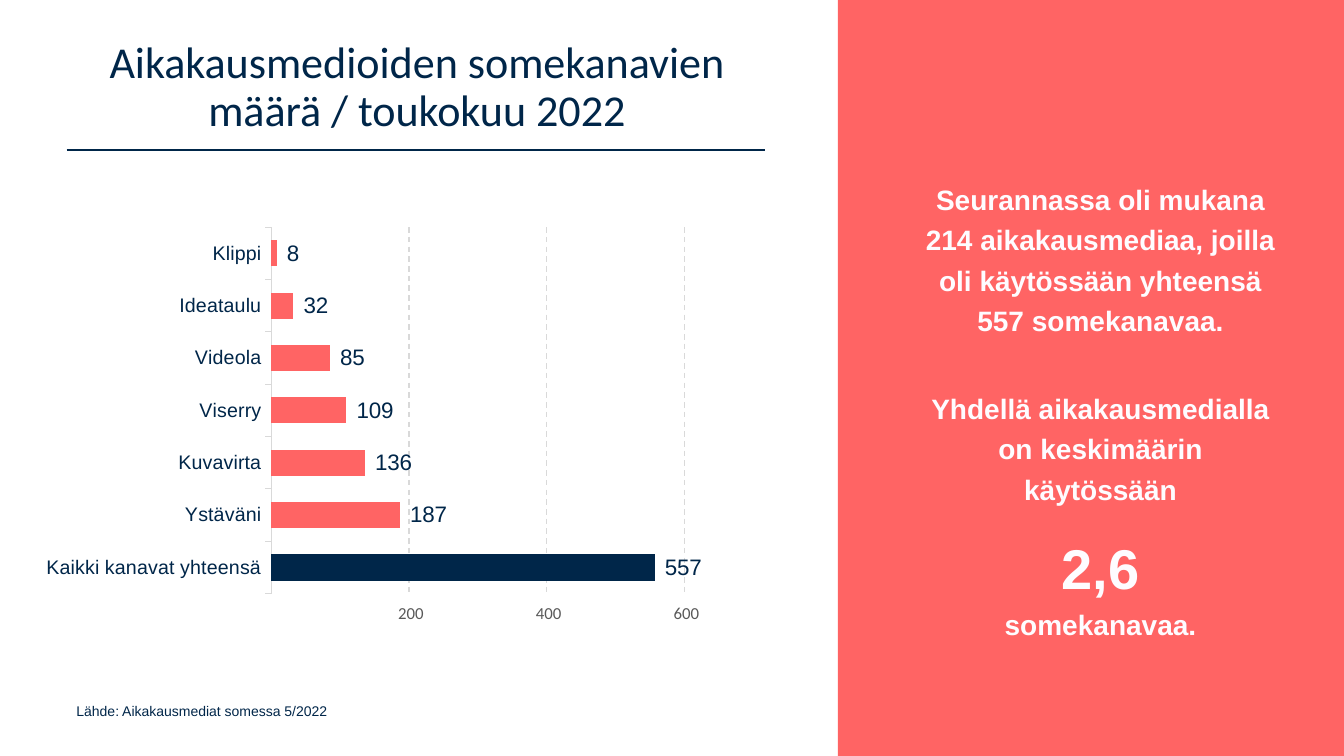
from lxml.etree import SubElement
from pptx import Presentation
from pptx.chart.data import CategoryChartData
from pptx.dml.color import RGBColor
from pptx.enum.chart import XL_CHART_TYPE, XL_LABEL_POSITION, XL_TICK_MARK
from pptx.enum.dml import MSO_LINE
from pptx.enum.shapes import MSO_CONNECTOR, MSO_SHAPE
from pptx.enum.text import MSO_ANCHOR, PP_ALIGN
from pptx.oxml.ns import qn
from pptx.util import Inches, Pt

NAVY = RGBColor(0x00, 0x26, 0x49)
CORAL = RGBColor(0xFF, 0x64, 0x64)
OFF_WHITE = RGBColor(0xFE, 0xFC, 0xFF)
GRID_GREY = RGBColor(0xD9, 0xD9, 0xD9)
SCALE_GREY = RGBColor(0x59, 0x59, 0x59)

COUNT_FORMAT = r"#\ ##0;\-#\ ##0;;@"
CHANNEL_COUNTS = {
    "Kaikki kanavat yhteensä": 557,
    "Ystäväni": 187,
    "Kuvavirta": 136,
    "Viserry": 109,
    "Videola": 85,
    "Ideataulu": 32,
    "Klippi": 8,
}
# Text, size and space before, in points
FINDINGS = [
    ("Seurannassa oli mukana 214 aikakausmediaa, joilla oli käytössään "
     "yhteensä 557 somekanavaa.", 20, 0),
    ("Yhdellä aikakausmedialla on keskimäärin käytössään", 20, 34),
    ("2,6", 40, 10),
    ("somekanavaa.", 20, 0),
]


def style_font(font, name, size, color, bold=False):
    font.name = name
    font.size = Pt(size)
    font.bold = bold
    font.color.rgb = color


def add_text_frame(slide, left, top, width, height, anchor):
    box = slide.shapes.add_textbox(Inches(left), Inches(top),
                                   Inches(width), Inches(height))
    frame = box.text_frame
    frame.word_wrap = True
    frame.vertical_anchor = anchor
    return frame


def add_heading(slide, left, top, width, height):
    frame = add_text_frame(slide, left, top, width, height, MSO_ANCHOR.MIDDLE)
    heading = frame.paragraphs[0]
    heading.text = "Aikakausmedioiden somekanavien määrä / toukokuu 2022"
    heading.alignment = PP_ALIGN.CENTER
    heading.line_spacing = 0.9
    style_font(heading.runs[0].font, "Calibri", 31.5, NAVY)

    # Rule under the heading
    rule_y = Inches(top + height - 0.01)
    rule = slide.shapes.add_connector(
        MSO_CONNECTOR.STRAIGHT, Inches(left), rule_y,
        Inches(left + width - 0.02), rule_y)
    rule.line.color.rgb = NAVY
    rule.line.width = Pt(1)
    SubElement(rule._element.spPr, qn("a:effectLst"))


def set_plot_layout(chart, x, y, w, h):
    plot_area = chart._chartSpace.chart.plotArea
    for old_layout in plot_area.findall(qn("c:layout")):
        plot_area.remove(old_layout)
    layout = SubElement(plot_area, qn("c:layout"))
    plot_area.insert(0, layout)
    manual = SubElement(layout, qn("c:manualLayout"))
    settings = [("layoutTarget", "inner"), ("xMode", "edge"), ("yMode", "edge"),
                ("x", x), ("y", y), ("w", w), ("h", h)]
    for tag, value in settings:
        SubElement(manual, qn(f"c:{tag}")).set("val", str(value))


def add_channel_chart(slide, left, top, width, height):
    channel_data = CategoryChartData()
    channel_data.categories = list(CHANNEL_COUNTS)
    channel_data.add_series("Somekanavat", list(CHANNEL_COUNTS.values()))
    chart = slide.shapes.add_chart(
        XL_CHART_TYPE.BAR_CLUSTERED, Inches(left), Inches(top),
        Inches(width), Inches(height), channel_data).chart
    chart.has_legend = False
    chart.has_title = False
    chart.font.name = "Calibri"
    chart.font.size = Pt(10)
    set_plot_layout(chart, 0.324, 0.086, 0.493, 0.838)

    # Bars, with the total highlighted
    plot = chart.plots[0]
    plot.gap_width = 100
    plot.vary_by_categories = False
    counts = plot.series[0]
    counts.invert_if_negative = False
    for fill, color in ((counts.format.fill, CORAL),
                        (counts.points[0].format.fill, NAVY)):
        fill.solid()
        fill.fore_color.rgb = color

    # Value labels
    labels = counts.data_labels
    labels.show_value = True
    labels.position = XL_LABEL_POSITION.OUTSIDE_END
    labels.number_format = COUNT_FORMAT
    labels.number_format_is_linked = False
    style_font(labels.font, "Arial", 16, NAVY)

    # Channel names
    channels = chart.category_axis
    channels.major_tick_mark = XL_TICK_MARK.OUTSIDE
    channels.format.line.color.rgb = GRID_GREY
    channels.format.line.width = Pt(0.75)
    style_font(channels.tick_labels.font, "Arial", 14, NAVY)

    # Scale and grid
    scale = chart.value_axis
    scale.minimum_scale = 0
    scale.maximum_scale = 600
    scale.major_unit = 200
    scale.major_tick_mark = XL_TICK_MARK.OUTSIDE
    scale.format.line.fill.background()
    scale.tick_labels.number_format = COUNT_FORMAT
    scale.tick_labels.number_format_is_linked = False
    style_font(scale.tick_labels.font, "Calibri", 12, SCALE_GREY)
    grid = scale.major_gridlines.format.line
    grid.color.rgb = GRID_GREY
    grid.width = Pt(1)
    grid.dash_style = MSO_LINE.DASH


def add_source_note(slide, left, top, width, height):
    frame = add_text_frame(slide, left, top, width, height, MSO_ANCHOR.TOP)
    frame.text = "Lähde: Aikakausmediat somessa 5/2022"
    style_font(frame.paragraphs[0].runs[0].font, "Arial", 10, NAVY)


def add_findings_panel(slide, left, top, width, height):
    panel = slide.shapes.add_shape(MSO_SHAPE.RECTANGLE, Inches(left), Inches(top),
                                   Inches(width), Inches(height))
    panel.shadow.inherit = False
    panel.fill.solid()
    panel.fill.fore_color.rgb = CORAL
    panel.line.fill.background()

    frame = add_text_frame(slide, left + 0.73, top + 1.5, 3.75, 5.1,
                           MSO_ANCHOR.MIDDLE)
    for index, (text, size, space_before) in enumerate(FINDINGS):
        finding = frame.add_paragraph() if index else frame.paragraphs[0]
        finding.text = text
        finding.alignment = PP_ALIGN.CENTER
        finding.line_spacing = 1.2
        if space_before:
            finding.space_before = Pt(space_before)
        style_font(finding.runs[0].font, "Arial", size, OFF_WHITE, bold=True)


def main():
    presentation = Presentation()
    presentation.slide_width = Inches(13.33)
    presentation.slide_height = Inches(7.5)
    slide = presentation.slides.add_slide(presentation.slide_layouts[6])
    add_findings_panel(slide, 8.31, 0, 5.02, 7.5)
    add_heading(slide, 0.66, 0.25, 6.95, 1.25)
    add_channel_chart(slide, 0, 1.88, 8.31, 4.34)
    add_source_note(slide, 0.66, 6.92, 6.58, 0.44)
    presentation.save("out.pptx")


if __name__ == "__main__":
    main()
